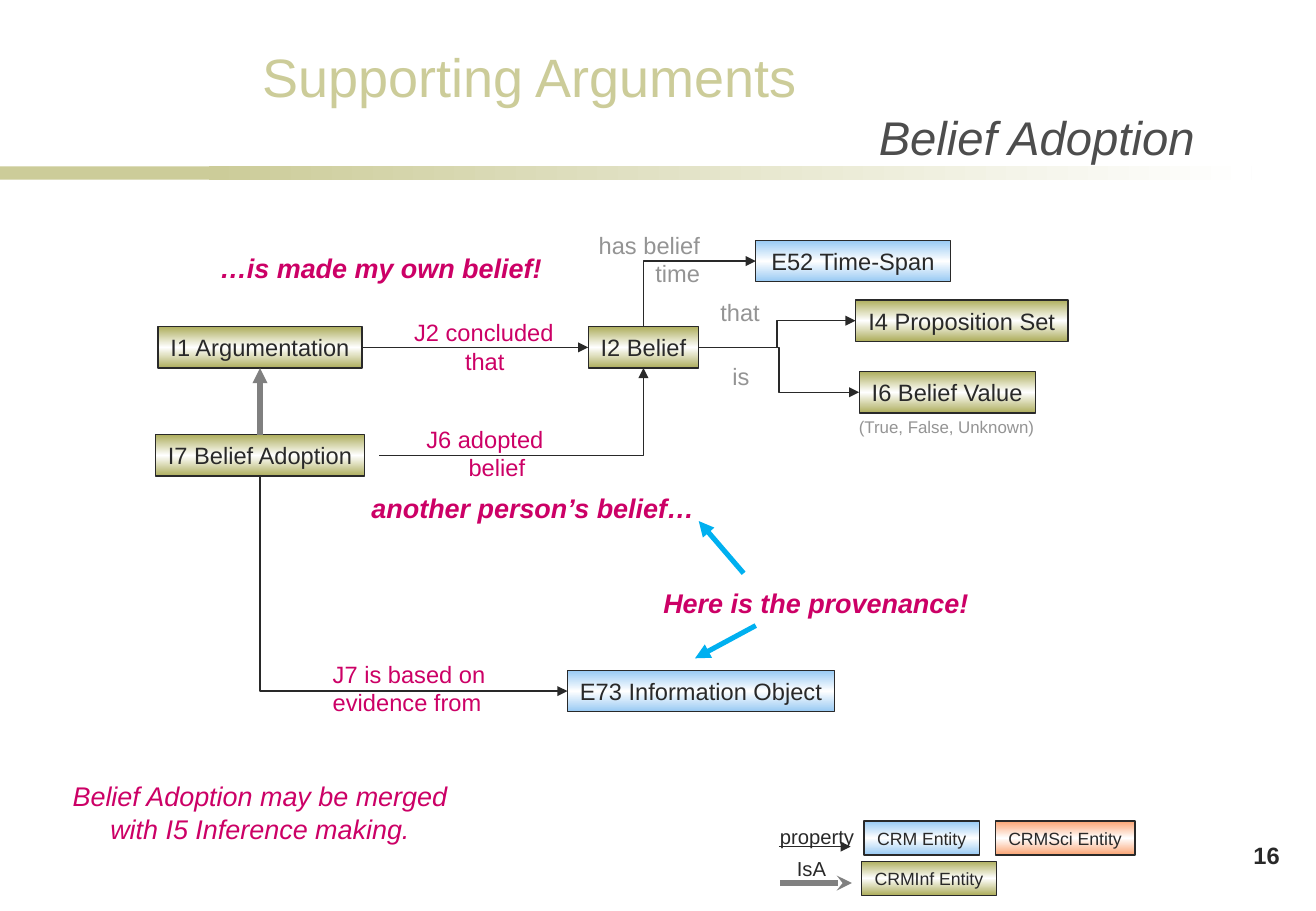
import pptx
import pptx.util
from lxml import etree
from pptx.dml.color import RGBColor
from pptx.enum.shapes import MSO_CONNECTOR, MSO_SHAPE
from pptx.enum.text import MSO_ANCHOR, PP_ALIGN
from pptx.oxml.ns import qn

Inches = pptx.util.Inches
Pt = pptx.util.Pt

INK = RGBColor(0x29, 0x29, 0x29)
DARK = RGBColor(0x4D, 0x4D, 0x4D)
MID = RGBColor(0x80, 0x80, 0x80)
PALE = RGBColor(0x94, 0x94, 0x94)
PINK = RGBColor(0xCC, 0x00, 0x66)
SAND = RGBColor(0xCC, 0xCC, 0x99)
OLIVE = RGBColor(0xAE, 0xAE, 0x5D)
BLUE = RGBColor(0x97, 0xC9, 0xF3)
CORAL = RGBColor(0xFA, 0xA3, 0x72)
CYAN = RGBColor(0x00, 0xB0, 0xF0)
WHITE = RGBColor(0xFF, 0xFF, 0xFF)

LEFT, MIDDLE, RIGHT = PP_ALIGN.LEFT, PP_ALIGN.CENTER, PP_ALIGN.RIGHT
TOP_SIDE, LEFT_SIDE, BOTTOM_SIDE, RIGHT_SIDE = range(4)
BOX_H, KEY_H = 0.34, 0.28

TITLE = "Belief Adoption"

ENTITIES = [
    ("I2 Belief", 4.84, 2.69, 0.91, OLIVE),
    ("I1 Argumentation", 1.3, 2.69, 1.68, OLIVE),
    ("I7 Belief Adoption", 1.28, 3.58, 1.72, OLIVE),
    ("I4 Proposition Set", 7.04, 2.47, 1.75, OLIVE),
    ("I6 Belief Value", 7.07, 3.06, 1.45, OLIVE),
    ("E52 Time-Span", 6.22, 1.98, 1.6, BLUE),
    ("E73 Information Object", 4.67, 5.52, 2.2, BLUE),
]

KEYS = [
    ("CRM Entity", 7.11, 6.76, 0.95, BLUE),
    ("CRMInf Entity", 7.09, 7.09, 1.11, OLIVE),
    ("CRMSci Entity", 8.19, 6.76, 1.15, CORAL),
]

LABELS = [
    ([("Supporting Arguments", LEFT)], (2.06, 0.31, 4.64, 0.64), 32, SAND, "", False),
    ([("16", RIGHT)], (8.38, 6.87, 2.25, 0.34), 14, INK, "b", True),
    ([("J2 concluded", LEFT), ("that", MIDDLE)], (3.31, 2.57, 1.36, 0.57), 14, PINK, "", True),
    ([("J6 adopted", LEFT), ("belief", MIDDLE)], (3.41, 3.45, 1.36, 0.57), 14, PINK, "", True),
    ([("J7 is based on evidence from", LEFT)], (2.64, 5.38, 1.54, 0.57), 14, PINK, "", True),
    ([("has belief", RIGHT), ("time", RIGHT)], (4.82, 1.85, 1.04, 0.57), 14, PALE, "", False),
    ([("that", LEFT)], (5.83, 2.4, 0.53, 0.34), 14, PALE, "", False),
    ([("is", LEFT)], (5.93, 2.93, 0.34, 0.34), 14, PALE, "", False),
    ([("(True, False, Unknown)", LEFT)], (6.97, 3.38, 1.73, 0.27), 10, PALE, "", False),
    ([("property", LEFT)], (6.32, 6.74, 0.88, 0.3), 12, INK, "", False),
    ([("IsA", LEFT)], (6.46, 7, 0.46, 0.3), 12, INK, "", False),
    ([("another person’s belief…", MIDDLE)], (2.94, 4, 2.89, 0.64), 16, PINK, "bi", False),
    ([("…is made my own belief!", MIDDLE)], (1.69, 2.02, 2.89, 0.64), 16, PINK, "bi", False),
    ([("Here is the provenance!", MIDDLE)], (5.34, 4.78, 2.75, 0.64), 16, PINK, "bi", False),
    ([("Belief Adoption may be merged", MIDDLE), ("with I5 Inference making.", MIDDLE)],
     (0.48, 6.37, 3.32, 0.91), 16, PINK, "i", False),
]

STRAIGHT, ELBOW, CORNER = "line", "bentConnector3", "bentConnector2"

LINKS = [
    (STRAIGHT, ("I1 Argumentation", RIGHT_SIDE), ("I2 Belief", LEFT_SIDE), "tailEnd", INK, 0.75),
    (STRAIGHT, ("I7 Belief Adoption", TOP_SIDE), ("I1 Argumentation", BOTTOM_SIDE), "tailEnd", MID, 3),
    (ELBOW, ("I2 Belief", RIGHT_SIDE), ("I4 Proposition Set", LEFT_SIDE), "tailEnd", INK, 0.75),
    (ELBOW, ("I2 Belief", RIGHT_SIDE), ("I6 Belief Value", LEFT_SIDE), "tailEnd", INK, 0.75),
    (CORNER, ("E52 Time-Span", LEFT_SIDE), ("I2 Belief", TOP_SIDE), "headEnd", INK, 0.75),
    (CORNER, (3.12, 3.75), ("I2 Belief", BOTTOM_SIDE), "tailEnd", INK, 0.75),
    (CORNER, ("E73 Information Object", LEFT_SIDE), ("I7 Belief Adoption", BOTTOM_SIDE), "headEnd", INK, 0.75),
    (STRAIGHT, (6.12, 4.72), (5.75, 4.29), "tailEnd", CYAN, 3),
    (STRAIGHT, (6.22, 5.15), (5.72, 5.42), "tailEnd", CYAN, 3),
    (STRAIGHT, (6.41, 6.97), (7, 6.97), "tailEnd", INK, 0.75),
    (STRAIGHT, (6.42, 7.27), (7.01, 7.27), "tailEnd", MID, 3),
]


def write(frame, lines, size, color, style="", wrap=False):
    frame.word_wrap = wrap
    for i, (text, align) in enumerate(lines):
        para = frame.paragraphs[0] if i == 0 else frame.add_paragraph()
        para.alignment = align
        run = para.add_run()
        run.text = text
        font = run.font
        font.name, font.size, font.color.rgb = "Arial", Pt(size), color
        font.bold, font.italic = "b" in style, "i" in style


def add_rect(x, y, w, h, colors, angle):
    rect = slide.shapes.add_shape(MSO_SHAPE.RECTANGLE, Inches(x), Inches(y), Inches(w), Inches(h))
    rect.shadow.inherit = False
    rect.line.fill.background()
    if len(colors) == 1:
        rect.fill.solid()
        rect.fill.fore_color.rgb = colors[0]
        return rect
    rect.fill.gradient()
    rect.fill.gradient_angle = angle
    stops = next(rect._element.iter(qn("a:gsLst")))
    stops.clear()
    for i, color in enumerate(colors):
        stop = etree.SubElement(stops, qn("a:gs"), pos=str(100000 * i // (len(colors) - 1)))
        etree.SubElement(stop, qn("a:srgbClr"), val=str(color))
    return rect


def add_box(text, x, y, w, h, color, size):
    box = add_rect(x, y, w, h, [color, WHITE, color], 90)
    box.line.color.rgb, box.line.width = INK, Pt(0.75)
    box.text_frame.vertical_anchor = MSO_ANCHOR.MIDDLE
    write(box.text_frame, [(text, MIDDLE)], size, INK)
    return box


def add_link(kind, start, end, arrow, color, width):
    form = MSO_CONNECTOR.STRAIGHT if kind == STRAIGHT else MSO_CONNECTOR.ELBOW
    link = slide.shapes.add_connector(form, 0, 0, 0, 0)
    if isinstance(start[0], str):
        link.begin_connect(boxes[start[0]], start[1])
    else:
        link.begin_x, link.begin_y = map(Inches, start)
    if isinstance(end[0], str):
        link.end_connect(boxes[end[0]], end[1])
    else:
        link.end_x, link.end_y = map(Inches, end)
    link.line.color.rgb, link.line.width = color, Pt(width)
    props = link._element.spPr
    props.find(qn("a:prstGeom")).set("prst", kind)
    head = "stealth" if start == (6.42, 7.27) else "triangle"
    etree.SubElement(props.find(qn("a:ln")), qn("a:" + arrow), type=head)
    etree.SubElement(props, qn("a:effectLst"))


deck = pptx.Presentation()
deck.slide_width, deck.slide_height = Inches(10.83), Inches(7.5)
slide = deck.slides.add_slide(deck.slide_layouts[5])

add_rect(0, 1.37, 2.53, 0.11, [SAND], 0)
add_rect(1.72, 1.37, 8.58, 0.11, [SAND, WHITE], 0)

title = slide.shapes.title
title.left, title.top, title.width, title.height = map(Inches, (2.11, 0.78, 7.82, 0.63))
title.text_frame.vertical_anchor = MSO_ANCHOR.BOTTOM
write(title.text_frame, [(TITLE, RIGHT)], 28, DARK, "i", True)

boxes = {text: add_box(text, x, y, w, BOX_H, color, 14) for text, x, y, w, color in ENTITIES}
for text, x, y, w, color in KEYS:
    add_box(text, x, y, w, KEY_H, color, 10.5)
for link in LINKS:
    add_link(*link)
for lines, place, size, color, style, wrap in LABELS:
    label = slide.shapes.add_textbox(*map(Inches, place))
    write(label.text_frame, lines, size, color, style, wrap)

deck.save("out.pptx")
